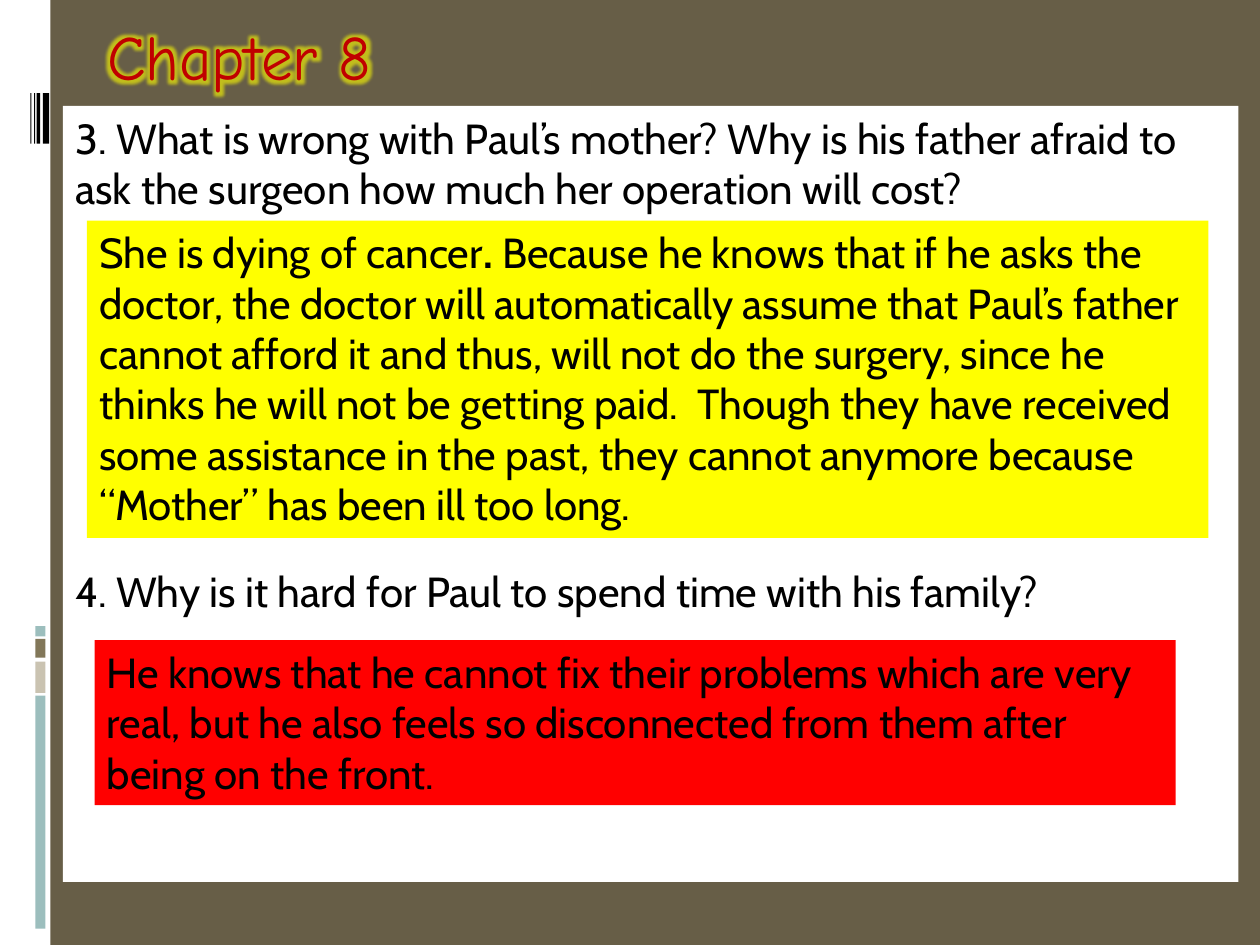
from lxml import etree
from pptx import Presentation
from pptx.dml.color import RGBColor
from pptx.enum.shapes import MSO_SHAPE
from pptx.enum.text import MSO_ANCHOR, MSO_AUTO_SIZE, PP_ALIGN
from pptx.oxml.ns import qn
from pptx.util import Inches, Pt

COLORS = {
    "background": "675E47",
    "white": "FFFFFF",
    "black": "000000",
    "teal": "9CBEBD",
    "sand": "CAC3B1",
    "brown": "827759",
    "title": "C00000",
    "glow": "FFFF00",
    "yellow": "FFFF00",
    "red": "FF0000",
}
LINE_HEIGHT = 28.8


def rgb(name):
    return RGBColor.from_string(COLORS[name])


def add_block(slide, left, top, width, height, color):
    block = slide.shapes.add_shape(
        MSO_SHAPE.RECTANGLE, Inches(left), Inches(top), Inches(width), Inches(height)
    )
    block.shadow.inherit = False
    block.fill.solid()
    block.fill.fore_color.rgb = rgb(color)
    block.line.fill.background()
    return block


def write_text(shape, paragraphs, font="Cabin", size=24, color="black",
               anchor=MSO_ANCHOR.TOP, gap=0):
    frame = shape.text_frame
    frame.word_wrap = True
    frame.auto_size = MSO_AUTO_SIZE.NONE
    frame.vertical_anchor = anchor
    for index, runs in enumerate(paragraphs):
        paragraph = frame.add_paragraph() if index else frame.paragraphs[0]
        paragraph.alignment = PP_ALIGN.LEFT
        if index:
            paragraph.space_before = Pt(gap)
        for words, bold in runs:
            run = paragraph.add_run()
            run.text = words
            run.font.name = font
            run.font.size = Pt(size)
            run.font.bold = bold
            run.font.color.rgb = rgb(color)


def add_glow(run, color, radius):
    effects = etree.Element(qn("a:effectLst"))
    glow = etree.SubElement(effects, qn("a:glow"), rad=str(Pt(radius)))
    tint = etree.SubElement(glow, qn("a:srgbClr"), val=COLORS[color])
    etree.SubElement(tint, qn("a:alpha"), val="60000")
    run.font.fill._xPr.find(qn("a:solidFill")).addnext(effects)


def add_side_strip(slide, left, top, width, height):
    add_block(slide, left, top, width, height, "white")
    for offset, length, color in [
        (5.52, 1.85, "teal"), (5.25, 0.25, "sand"),
        (5.07, 0.15, "brown"), (4.97, 0.08, "teal"),
    ]:
        add_block(slide, left + 0.28, top + offset, 0.08, length, color)
    for offset, thickness in [(0.34, 0.05), (0.29, 0.03), (0.27, 0.01), (0.24, 0.01)]:
        add_block(slide, left + offset, top + 0.74, thickness, 0.4, "black")


def add_title(slide, left, top, width, height):
    title = slide.shapes.title
    title.left, title.top = Inches(left), Inches(top)
    title.width, title.height = Inches(width), Inches(height)
    write_text(title, [[("Chapter 8", False)]], font="Comic Neue", size=36, color="title")
    add_glow(title.text_frame.paragraphs[0].runs[0], "glow", 8)


def add_questions(slide, left, top, width, height):
    panel = add_block(slide, left, top, width, height, "white")
    write_text(panel, [
        [("3. What is wrong with Paul’s mother? Why is his father afraid to "
          "ask the surgeon how much her operation will cost?", False)],
        [("4. Why is it hard for Paul to spend time with his family?", False)],
    ], gap=7 * LINE_HEIGHT)

    mother_answer = add_block(slide, left + 0.19, top + 0.91, 8.9, 2.52, "yellow")
    write_text(mother_answer, [[
        ("She is dying of cancer", False),
        (". ", True),
        ("Because he knows that if he asks the doctor, the doctor will automatically "
         "assume that Paul’s father cannot afford it and thus, will not do the surgery, "
         "since he thinks he will not be getting paid.  Though they have received some "
         "assistance in the past, they cannot anymore because “Mother” has been ill "
         "too long.", False),
    ]])

    family_answer = add_block(slide, left + 0.25, top + 4.24, 8.58, 1.31, "red")
    write_text(family_answer, [[
        ("He knows that he cannot fix their problems which are very real, but he also "
         "feels so disconnected from them after being on the front.", False),
    ]])


def main():
    deck = Presentation()
    deck.slide_width, deck.slide_height = Inches(10), Inches(7.5)
    slide = deck.slides.add_slide(deck.slide_layouts[5])
    slide.background.fill.solid()
    slide.background.fill.fore_color.rgb = rgb("background")
    add_side_strip(slide, 0, 0, 0.4, 7.5)
    add_title(slide, 0.75, 0.09, 8.83, 0.71)
    add_questions(slide, 0.5, 0.84, 9.33, 6.16)
    deck.save("out.pptx")


if __name__ == "__main__":
    main()
